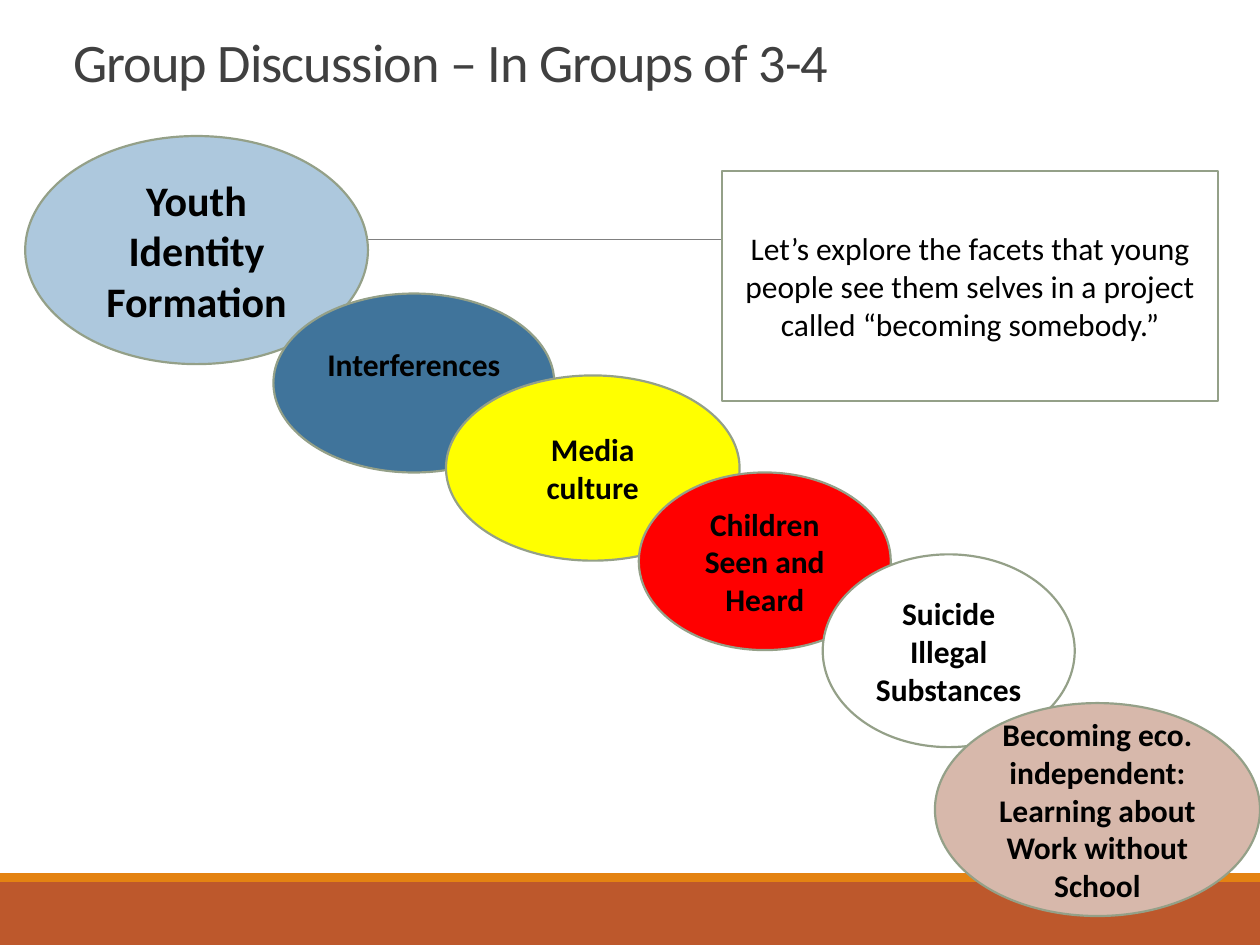
"""Build the group discussion slide with its cascade of overlapping ovals."""
from dataclasses import dataclass

from pptx import Presentation
from pptx.dml.color import RGBColor
from pptx.enum.shapes import MSO_CONNECTOR as CONN, MSO_SHAPE as SHAPE
from pptx.enum.text import MSO_ANCHOR as ANCHOR, MSO_AUTO_SIZE as FIT, PP_ALIGN as ALIGN
from pptx.oxml.ns import qn
from pptx.util import Inches, Pt


@dataclass(frozen=True)
class Theme:
    font: str = "Calibri"
    title_size: float = 31
    lead_size: float = 24
    body_size: float = 18
    title: str = "404040"
    text: str = "000000"
    outline: str = "94A088"
    rule: str = "808080"
    band: str = "BD582C"
    stripe: str = "E48312"
    white: str = "FFFFFF"
    pale_blue: str = "ADC8DD"
    blue: str = "40749B"
    yellow: str = "FFFF00"
    red: str = "FF0000"
    blush: str = "D7B8AB"


THEME = Theme()
FACETS = [
    ((0.2, 1.08, 2.72, 1.81), THEME.pale_blue, ["Youth Identity Formation"],
     {"size": THEME.lead_size}),
    ((2.17, 2.33, 2.23, 1.42), THEME.blue, ["Interferences"], {"bottom": 0.35}),
    ((3.54, 2.98, 2.33, 1.47), THEME.yellow, ["Media", "culture"], {}),
    ((5.07, 3.75, 2, 1.41), THEME.red, ["Children Seen and Heard"], {}),
    ((6.53, 4.4, 2, 1.53), THEME.white, ["Suicide", "Illegal Substances"], {}),
    ((7.42, 5.58, 2.58, 1.69), THEME.blush,
     ["Becoming eco. independent:", "Learning about Work without School"], {}),
]
PROMPT = ("Let’s explore the facets that young people see them selves "
          "in a project called “becoming somebody.”")


def set_attrs(obj, values):
    for name, value in values.items():
        setattr(obj, name, value)


def write(tf, lines, size, color, align, bold=False, spacing=1.0):
    for i, line in enumerate(lines):
        p = tf.paragraphs[0] if i == 0 else tf.add_paragraph()
        set_attrs(p, {"alignment": align, "line_spacing": spacing})
        r = p.add_run()
        r.text = line
        set_attrs(r.font, {"name": THEME.font, "size": Pt(size), "bold": bold})
        r.font.color.rgb = RGBColor.from_string(color)


def add_title(s, text):
    sp = s.shapes.title
    set_attrs(sp, {"left": Inches(0.48), "top": Inches(0.14),
                   "width": Inches(9.17), "height": Inches(1.44)})
    tf = sp.text_frame
    set_attrs(tf, {"vertical_anchor": ANCHOR.BOTTOM, "word_wrap": True,
                   "auto_size": FIT.NONE, "margin_bottom": Inches(0.84)})
    write(tf, [text], THEME.title_size, THEME.title, ALIGN.LEFT, spacing=0.85)
    for r in tf.paragraphs[0].runs:
        r.font._element.set("spc", "-50")


def add_block(s, kind, box, fill, outline=None):
    sp = s.shapes.add_shape(kind, *map(Inches, box))
    sp.shadow.inherit = False
    sp.fill.solid()
    sp.fill.fore_color.rgb = RGBColor.from_string(fill)
    if outline:
        sp.line.color.rgb = RGBColor.from_string(outline)
        sp.line.width = Pt(1.25)
    else:
        sp.line.fill.background()
    return sp


def add_label(s, kind, box, fill, lines, size=THEME.body_size, bold=True, bottom=0.05):
    tf = add_block(s, kind, box, fill, THEME.outline).text_frame
    set_attrs(tf, {"vertical_anchor": ANCHOR.MIDDLE, "word_wrap": True,
                   "margin_left": Inches(0.09), "margin_right": Inches(0.09),
                   "margin_bottom": Inches(bottom)})
    write(tf, lines, size, THEME.text, ALIGN.CENTER, bold)


def add_rule(s, left, right, y):
    line = s.shapes.add_connector(CONN.STRAIGHT, *map(Inches, (left, y, right, y)))
    line.line.color.rgb = RGBColor.from_string(THEME.rule)
    line.line.width = Pt(0.5)
    sp_pr = line._element.spPr
    sp_pr.append(sp_pr.makeelement(qn("a:effectLst"), {}))


def main():
    prs = Presentation()
    set_attrs(prs, {"slide_width": Inches(10), "slide_height": Inches(7.5)})
    s = prs.slides.add_slide(prs.slide_layouts[5])
    add_block(s, SHAPE.RECTANGLE, (0, 7, 10, 0.5), THEME.band)
    add_block(s, SHAPE.RECTANGLE, (0, 6.93, 10, 0.07), THEME.stripe)
    add_rule(s, 0.98, 9.15, 1.9)
    add_title(s, "Group Discussion – In Groups of 3-4")
    *cascade, last = FACETS
    for box, fill, lines, options in cascade:
        add_label(s, SHAPE.OVAL, box, fill, lines, **options)
    add_label(s, SHAPE.RECTANGLE, (5.73, 1.36, 3.94, 1.82), THEME.white, [PROMPT], bold=False)
    box, fill, lines, options = last
    add_label(s, SHAPE.OVAL, box, fill, lines, **options)
    prs.save("out.pptx")


if __name__ == "__main__":
    main()
